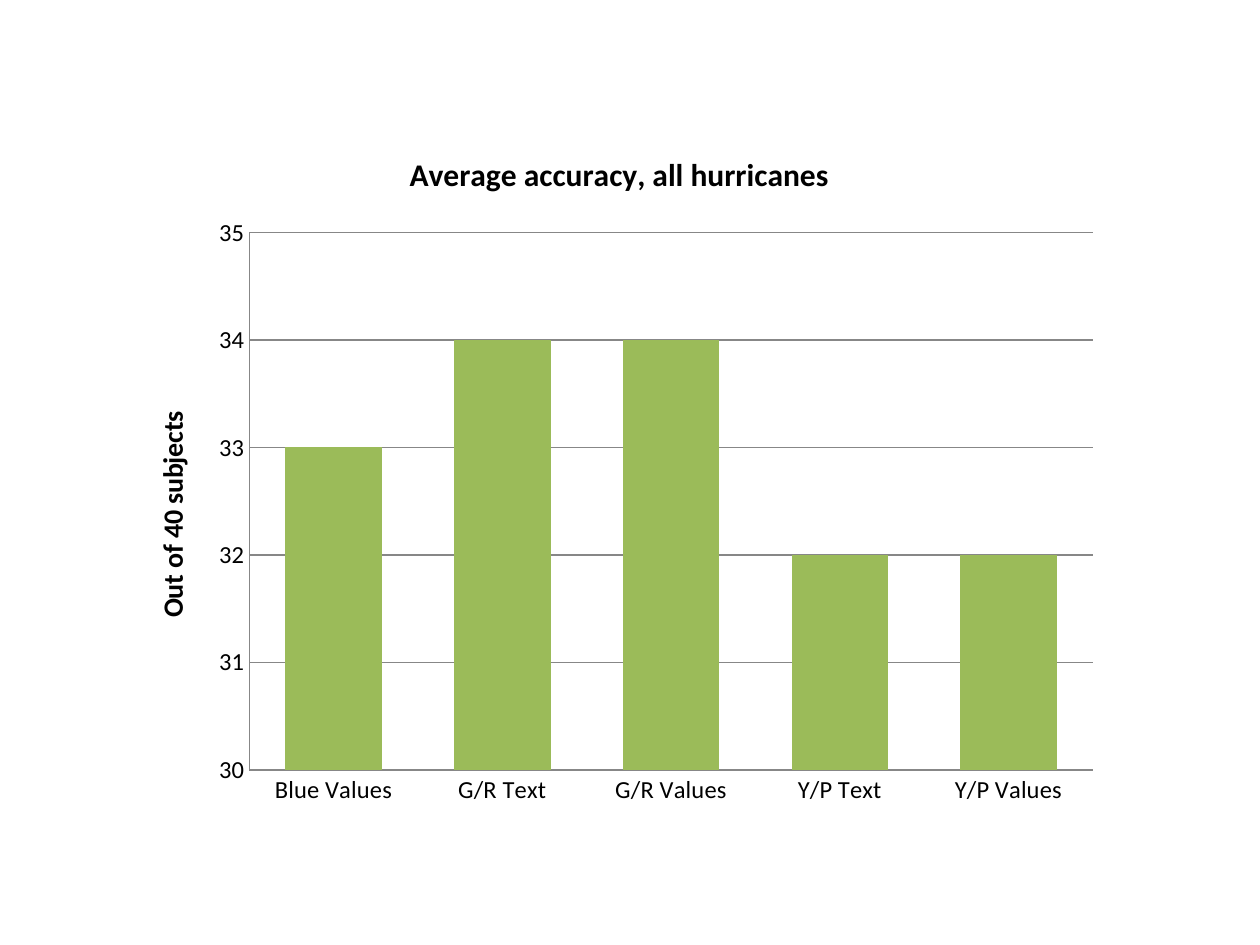
from pptx import Presentation
from pptx.chart.data import CategoryChartData as Data
from pptx.dml.color import RGBColor
from pptx.enum.chart import XL_CHART_TYPE as Kind, XL_TICK_MARK as Tick
from pptx.util import Inches, Pt

FONT = "Calibri"
SCORES = {
    "Blue Values": 33,
    "G/R Text": 34,
    "G/R Values": 34,
    "Y/P Text": 32,
    "Y/P Values": 32,
}


def paint(color, value):
    color.rgb = RGBColor.from_string(value)


def style(font, size, bold=False):
    font.name = FONT
    font.size = Pt(size)
    font.bold = bold
    paint(font.color, "000000")


def rule(line):
    line.width = Pt(0.75)
    paint(line.color, "878787")


def label(owner, text, size):
    frame = owner.text_frame
    frame.text = text
    style(frame.paragraphs[0].runs[0].font, size, True)


def add_bars(slide, left, top, width, height):
    data = Data()
    data.categories = list(SCORES)
    data.add_series("Series 1", list(SCORES.values()))
    frame = slide.shapes.add_chart(
        Kind.COLUMN_CLUSTERED, left, top, width, height, data)
    chart = frame.chart
    style(chart.font, 10)
    chart.has_legend = False
    chart.has_title = True
    label(chart.chart_title, "Average accuracy, all hurricanes", 18)

    plot = chart.plots[0]
    plot.gap_width = 75
    plot.vary_by_categories = False
    fill = plot.series[0].format.fill
    fill.solid()
    paint(fill.fore_color, "9BBB59")

    for axis in (chart.category_axis, chart.value_axis):
        axis.major_tick_mark = axis.minor_tick_mark = Tick.NONE
        style(axis.tick_labels.font, 14)
        rule(axis.format.line)

    scale = chart.value_axis
    scale.minimum_scale = 30
    scale.maximum_scale = 35
    scale.major_unit = 1
    scale.has_major_gridlines = True
    rule(scale.major_gridlines.format.line)
    scale.tick_labels.number_format = "0"
    scale.tick_labels.number_format_is_linked = False
    label(scale.axis_title, "Out of 40 subjects ", 16)


def main():
    deck = Presentation()
    deck.slide_width = Inches(10)
    deck.slide_height = Inches(7.5)
    slide = deck.slides.add_slide(deck.slide_layouts[6])
    add_bars(slide, Inches(1), Inches(1), Inches(7.83), Inches(5.5))
    deck.save("out.pptx")


if __name__ == "__main__":
    main()
